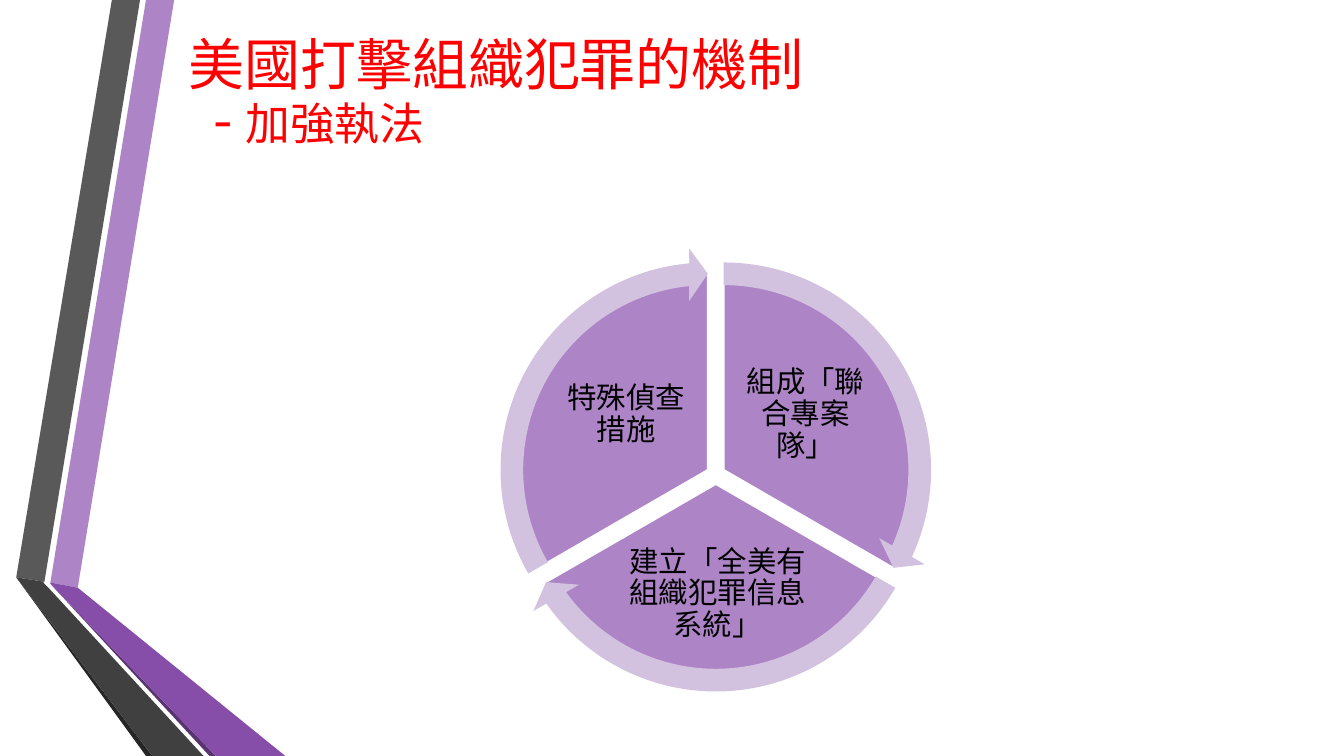
"""Build a slide with a three-part cycle on measures against organised crime."""
from pptx import Presentation, util as u
from pptx.dml.color import RGBColor
from pptx.enum import shapes, text
from pptx.oxml.ns import qn

FONT = "Noto Sans CJK SC"
TITLE = [
    (0, [("美國打擊組織犯罪的機制", 40)]),
    (0.63, [("- ", 40), ("加強執法", 32)]),
]
TITLE_BOX = (4.5, 0, 27.84, 4.88)
RIBBONS = [
    ("AD84C6", [(1.27, 14.68), (1.96, 14.81), (4.39, 0), (3.68, 0)]),
    ("595959", [(3.53, 0), (2.82, 0), (0.41, 14.55), (1.12, 14.66)]),
    ("262626", [(0.41, 14.55), (3.68, 19.05), (3.84, 19.05)]),
    ("5A3471", [(1.27, 14.71), (5.28, 19.05), (5.44, 19.05)]),
    ("874EA9", [(1.27, 14.71), (5.44, 19.05), (7.19, 19.05), (1.96, 14.81), (1.27, 14.68)]),
    ("404040", [(5.13, 19.05), (1.22, 14.81), (1.09, 14.68), (1.12, 14.66), (0.41, 14.55), (3.84, 19.05)]),
]
SEGMENTS = [
    dict(label="組成「聯合專案隊」", centre=(18.24, 11.84), angles=(162, 18),
         arrow=(14.725, 161.994), box=(18.52, 8.97, 3.56, 2.97)),
    dict(label="建立「全美有組織犯罪信息系統」", centre=(18.04, 12.2), angles=(18, 90),
         arrow=(86.72, 18.005), box=(15.42, 13.67, 5.33, 2.62)),
    dict(label="特殊偵查措施", centre=(17.84, 11.84), angles=(90, 162),
         arrow=(158.73, 90), box=(14, 8.97, 3.56, 2.97)),
]
PIE_SIZE, ARROW_SIZE = 9.96, 11.2


def colour(target, value):
    if hasattr(target, "solid"):
        target.solid()
        target = target.fore_color
    target.rgb = RGBColor.from_string(value)


def finish(shape, fill, line=None):
    shape.shadow.inherit = False
    colour(shape.fill, fill)
    if line:
        colour(shape.line.fill, line)
        shape.line.width = u.Pt(1.25)
    else:
        shape.line.fill.background()


def add_ribbon(slide, fill, points):
    start, *rest = [(u.Cm(x), u.Cm(y)) for x, y in points]
    builder = slide.shapes.build_freeform(*start)
    builder.add_line_segments(rest, close=True)
    finish(builder.convert_to_shape(), fill)


def add_round(slide, kind, centre, size, adjustments, fill, line=None):
    left, top = (u.Cm(value - size / 2) for value in centre)
    shape = slide.shapes.add_shape(kind, left, top, u.Cm(size), u.Cm(size))
    for index, value in enumerate(adjustments):
        shape.adjustments[index] = value
    finish(shape, fill, line)


def add_text(slide, box, paragraphs, hue, margins, layout):
    frame = slide.shapes.add_textbox(*map(u.Cm, box)).text_frame
    frame_format = dict(word_wrap=True, vertical_anchor=text.MSO_ANCHOR.MIDDLE, **margins)
    for name, value in frame_format.items():
        setattr(frame, name, value)
    for index, (indent, runs) in enumerate(paragraphs):
        paragraph = frame.add_paragraph() if index else frame.paragraphs[0]
        for name, value in layout.items():
            setattr(paragraph, name, value)
        if indent:
            paragraph._p.get_or_add_pPr().set("marL", str(u.Cm(indent)))
        for words, size in runs:
            run = paragraph.add_run()
            run.text = words
            for name, value in dict(name=FONT, size=u.Pt(size)).items():
                setattr(run.font, name, value)
            colour(run.font.fill, hue)
            east_asian = run._r.get_or_add_rPr().makeelement(qn("a:ea"), {"typeface": FONT})
            run._r.rPr.append(east_asian)


def main():
    presentation = Presentation()
    presentation.slide_width, presentation.slide_height = u.Cm(33.87), u.Cm(19.05)
    slide = presentation.slides.add_slide(presentation.slide_layouts[6])
    for fill, points in RIBBONS:
        add_ribbon(slide, fill, points)
    sides = ("left", "top", "right", "bottom")
    label_margins = {f"margin_{side}": u.Cm(0.08) for side in sides}
    label_layout = dict(alignment=text.PP_ALIGN.CENTER, line_spacing=0.9)
    for segment in SEGMENTS:
        add_round(slide, shapes.MSO_SHAPE.PIE if hasattr(shapes, "MSO_SHAPE") else shapes.MSO_AUTO_SHAPE_TYPE.PIE,
                  segment["centre"], PIE_SIZE, segment["angles"], "AD84C6", "FFFFFF")
        add_text(slide, segment["box"], [(0, [(segment["label"], 21)])], "000000", label_margins, label_layout)
    for segment in SEGMENTS:
        add_round(slide, shapes.MSO_SHAPE.CIRCULAR_ARROW, segment["centre"], ARROW_SIZE,
                  (0.051, 3.275, *segment["arrow"], 0.059), "D3C2DF")
    add_text(slide, TITLE_BOX, TITLE, "FF0000", {}, dict(line_spacing=0.82))
    presentation.save("out.pptx")


if __name__ == "__main__":
    main()
